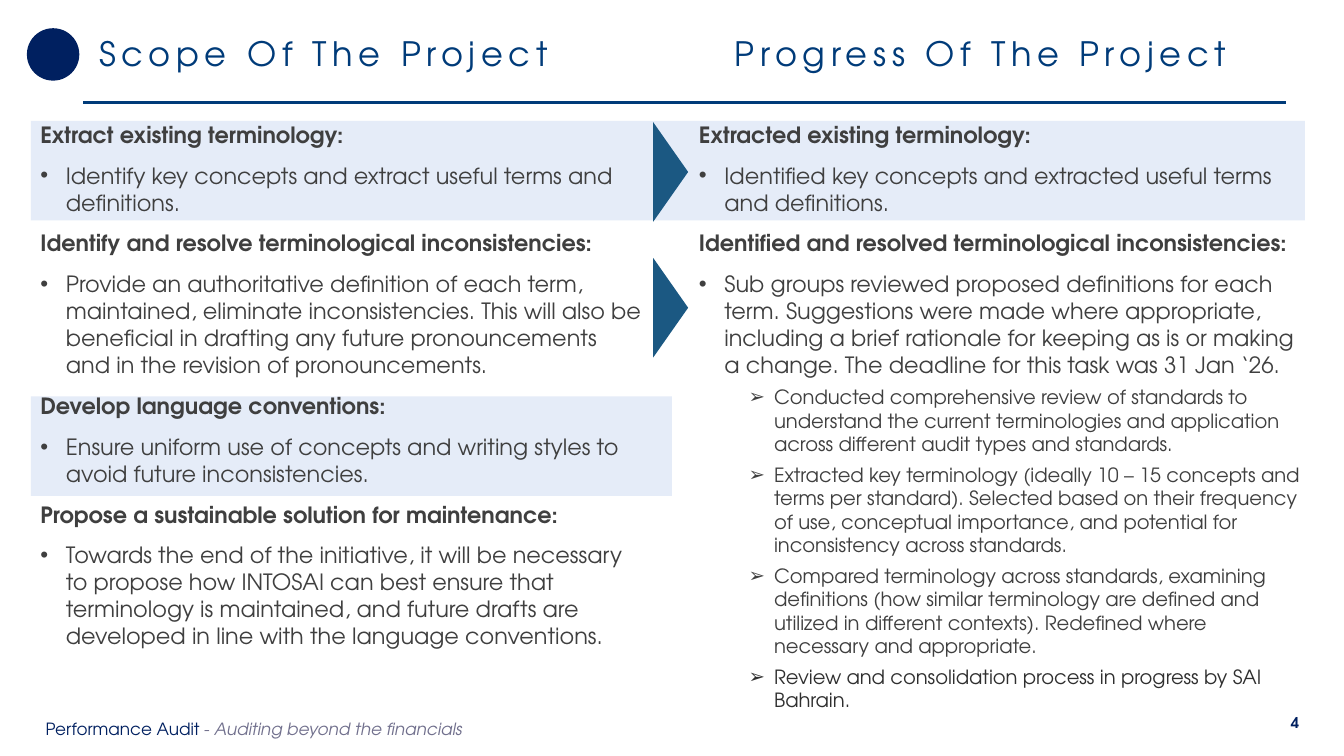
import pptx
import pptx.dml.color
import pptx.enum.shapes
import pptx.enum.text
import pptx.oxml
import pptx.oxml.ns
import pptx.util
from pptx.util import Inches

SHAPES = pptx.enum.shapes.MSO_SHAPE
ANCHORS = pptx.enum.text.MSO_ANCHOR
ALIGN = pptx.enum.text.PP_ALIGN
NAVY, BLUE, GREY, DARK = "002060", "003B79", "3F3F3F", "2F2F2F"
TEAL, PALE, MUTED = "1B5882", "C0D0EE", "71708D"
SLIDE_WIDTH = 10
SLIDE_HEIGHT = SLIDE_WIDTH * 9 / 16

# Paragraph styles: font attributes, space before, left indent, bullet
STYLES = {
    "heading": ({"size": pptx.util.Pt(12), "bold": True}, 7.5, 0, None),
    "bullet": ({"size": pptx.util.Pt(12), "bold": False}, 7.5, 0.19, "•"),
    "step": ({"size": pptx.util.Pt(10.5), "bold": False}, 3.8, 0.56, "➢"),
}
HANGING = 0.19


def colour(hex_value):
    return pptx.dml.color.RGBColor.from_string(hex_value)


def child(parent, tag, **attributes):
    node = parent.makeelement(pptx.oxml.ns.qn(tag), attributes)
    parent.append(node)
    return node


class Deck:
    font_name = "TeX Gyre Adventor"

    def __init__(self, width, height):
        self.presentation = pptx.Presentation()
        self.presentation.slide_width = Inches(width)
        self.presentation.slide_height = Inches(height)
        self.slide = self.presentation.slides.add_slide(
            self.presentation.slide_layouts[6])

    def shape(self, kind, box, fill, opacity=None, rotation=0):
        shape = self.slide.shapes.add_shape(kind, *map(Inches, box))
        shape.shadow.inherit = False
        shape.rotation = rotation
        shape.fill.solid()
        shape.fill.fore_color.rgb = colour(fill)
        shape.line.fill.background()
        if opacity is not None:
            rgb = shape.fill._xPr.find(".//" + pptx.oxml.ns.qn("a:srgbClr"))
            child(rgb, "a:alpha", val=str(opacity * 1000))

    def line(self, start, end, hex_value, width):
        rule = self.slide.shapes.add_connector(
            pptx.enum.shapes.MSO_CONNECTOR.STRAIGHT,
            *map(Inches, start + end))
        rule.line.color.rgb = colour(hex_value)
        rule.line.width = pptx.util.Pt(width)
        child(rule._element.spPr, "a:effectLst")

    def text_frame(self, box, inset=True, **settings):
        frame = self.slide.shapes.add_textbox(*map(Inches, box)).text_frame
        values = {"word_wrap": True, **settings}
        if not inset:
            values.update({f"margin_{side}": 0 for side in
                           ("left", "top", "right", "bottom")})
        for name, value in values.items():
            setattr(frame, name, value)
        return frame

    def run(self, paragraph, text, hex_value, **settings):
        run = paragraph.add_run()
        run.text = text
        for name, value in {"name": self.font_name, **settings}.items():
            setattr(run.font, name, value)
        run.font.color.rgb = colour(hex_value)
        return run

    def title(self, text, box):
        frame = self.text_frame(
            box, word_wrap=False,
            auto_size=pptx.enum.text.MSO_AUTO_SIZE.SHAPE_TO_FIT_TEXT)
        paragraph = frame.paragraphs[0]
        paragraph.line_spacing = 0.9
        run = self.run(paragraph, text, BLUE, size=pptx.util.Pt(18))
        run.font._element.set("spc", "300")

    def column(self, box, content):
        frame = self.text_frame(box, inset=False)
        for index, (style, text, *tint) in enumerate(content):
            settings, space, indent, bullet = STYLES[style]
            paragraph = frame.add_paragraph() if index else frame.paragraphs[0]
            if bullet:
                properties = paragraph._p.get_or_add_pPr()
                properties.set("marL", str(Inches(indent)))
                properties.set("indent", str(-Inches(HANGING)))
                child(properties, "a:buFont", typeface="Arial")
                child(properties, "a:buChar", char=bullet)
            if style == "step":
                paragraph.level = 1
            if index:
                paragraph.space_before = pptx.util.Pt(space)
            self.run(paragraph, text, tint[0] if tint else GREY, **settings)


SCOPE = [
    ("heading", "Extract existing terminology:"),
    ("bullet", "Identify key concepts and extract useful terms and definitions."),
    ("heading", "Identify and resolve terminological inconsistencies:"),
    ("bullet", "Provide an authoritative definition of each term, maintained, "
     "eliminate inconsistencies. This will also be beneficial in drafting any "
     "future pronouncements and in the revision of pronouncements."),
    ("heading", "Develop language conventions:"),
    ("bullet", "Ensure uniform use of concepts and writing styles to avoid "
     "future inconsistencies."),
    ("heading", "Propose a sustainable solution for maintenance:"),
    ("bullet", "Towards the end of the initiative, it will be necessary to "
     "propose how INTOSAI can best ensure that terminology is maintained, and "
     "future drafts are developed in line with the language conventions."),
]
PROGRESS = [
    ("heading", "Extracted existing terminology:"),
    ("bullet", "Identified key concepts and extracted useful terms and "
     "definitions."),
    ("heading", "Identified and resolved terminological inconsistencies:"),
    ("bullet", "Sub groups reviewed proposed definitions for each term. "
     "Suggestions were made where appropriate, including a brief rationale for "
     "keeping as is or making a change. The deadline for this task was 31 Jan "
     "‘26."),
    ("step", "Conducted comprehensive review of standards to understand the "
     "current terminologies and application across different audit types and "
     "standards."),
    ("step", "Extracted key terminology (ideally 10 – 15 concepts and terms per "
     "standard). Selected based on their frequency of use, conceptual "
     "importance, and potential for inconsistency across standards."),
    ("step", "Compared terminology across standards, examining definitions (how "
     "similar terminology are defined and utilized in different contexts). "
     "Redefined where necessary and appropriate."),
    ("step", "Review and consolidation process in progress by SAI Bahrain.",
     DARK),
]


def main():
    deck = Deck(SLIDE_WIDTH, SLIDE_HEIGHT)

    # Header rule, footer and dot
    deck.line((0.62, 0.76), (9.57, 0.76), BLUE, 1.5)
    footer = deck.text_frame((0.24, 5.27, 5.78, 0.3),
                             vertical_anchor=ANCHORS.MIDDLE).paragraphs[0]
    for text, tint, italic in (("Performance Audit ", NAVY, False),
                               ("- ", MUTED, False),
                               ("Auditing beyond the financials", MUTED, True)):
        deck.run(footer, text, tint, size=pptx.util.Pt(9), italic=italic)
    deck.shape(SHAPES.OVAL, (0.2, 0.21, 0.39, 0.39), NAVY)

    # Pale bands behind the topics
    for top, width in ((2.95, 4.77), (0.9, 9.48)):
        deck.shape(SHAPES.RECTANGLE, (0.23, top, width, 0.74), PALE, opacity=40)

    # Page number
    page = deck.text_frame((9.44, 5.28, 0.39, 0.2), inset=False,
                           vertical_anchor=ANCHORS.MIDDLE).paragraphs[0]
    page.alignment = ALIGN.CENTER
    deck.run(page, "4", NAVY, size=pptx.util.Pt(8), bold=True)

    # Titles and columns
    deck.title("Scope Of The Project", (0.64, 0.23, 3.62, 0.37))
    deck.title("Progress Of The Project", (5.37, 0.23, 3.95, 0.37))
    for left, content in ((0.3, SCOPE), (5.2, PROGRESS)):
        deck.column((left, 0.9, 4.51, 3.57), content)

    # Arrowheads from scope to progress
    for top in (1.15, 2.16):
        deck.shape(SHAPES.ISOSCELES_TRIANGLE, (4.62, top, 0.74, 0.26), TEAL,
                   rotation=90)

    deck.presentation.save("out.pptx")


if __name__ == "__main__":
    main()
